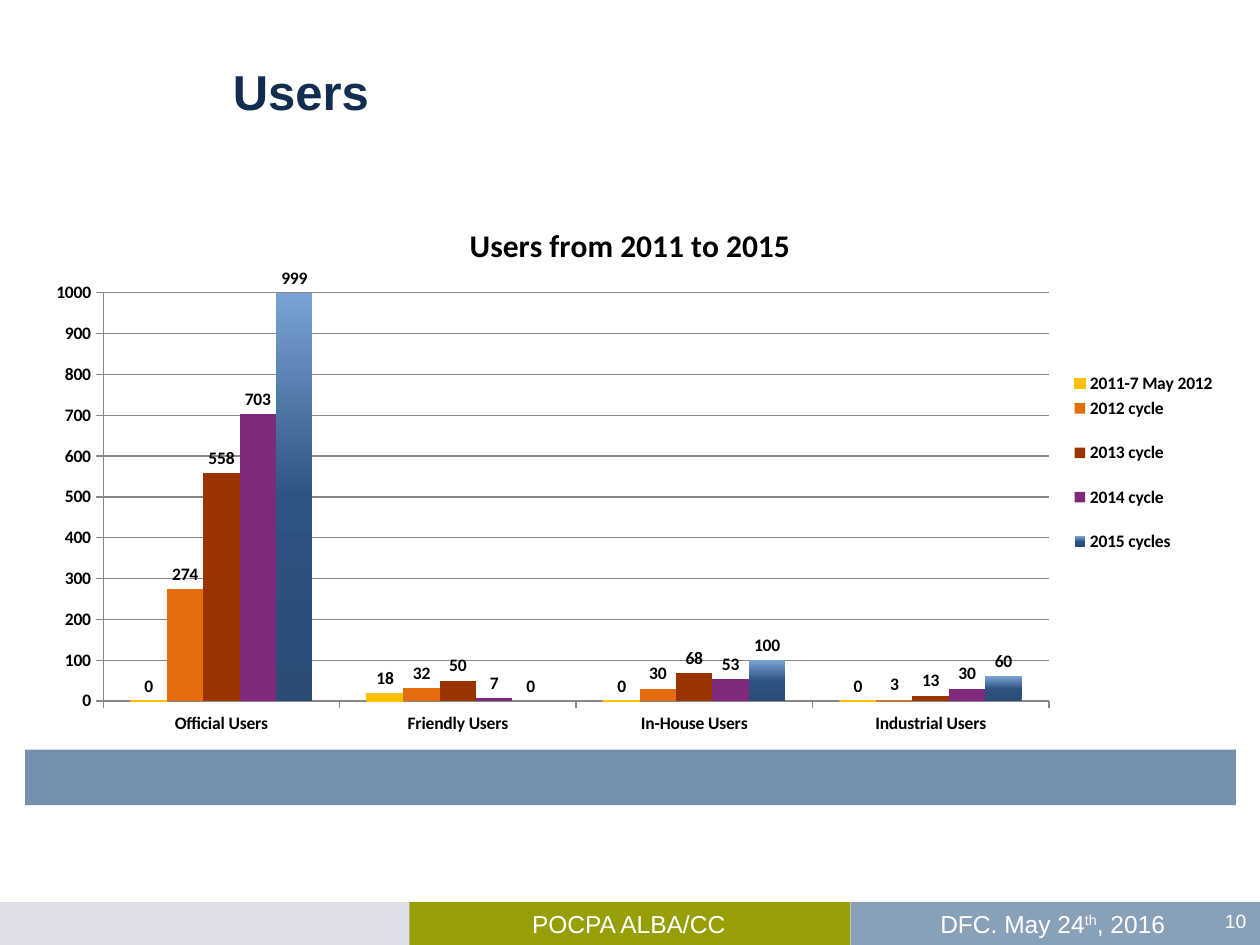
from lxml import etree
from pptx import Presentation
from pptx.chart.data import CategoryChartData
from pptx.dml.color import RGBColor
from pptx.enum.chart import XL_CHART_TYPE, XL_LABEL_POSITION, XL_LEGEND_POSITION, XL_TICK_MARK
from pptx.enum.shapes import MSO_SHAPE
from pptx.enum.text import MSO_ANCHOR, PP_ALIGN
from pptx.oxml import parse_xml
from pptx.oxml.ns import nsdecls, qn
from pptx.util import Inches, Pt

WHITE = RGBColor(0xFF, 0xFF, 0xFF)
BLACK = RGBColor(0, 0, 0)
NAVY = RGBColor(0x11, 0x2E, 0x50)
STEEL = RGBColor(0x74, 0x90, 0xAC)
PALE = RGBColor(0xDE, 0xDF, 0xE6)
OLIVE = RGBColor(0x97, 0x9F, 0x07)
BLUE_GREY = RGBColor(0x88, 0xA0, 0xB8)
GREY = RGBColor(0x87, 0x87, 0x87)
YELLOW = RGBColor(0xFF, 0xC0, 0x00)
ORANGE = RGBColor(0xE4, 0x6C, 0x0A)
RUST = RGBColor(0x99, 0x33, 0x00)
PURPLE = RGBColor(0x7F, 0x29, 0x7B)
BLUES = [(0, RGBColor(0x2A, 0x4C, 0x75)), (50, RGBColor(0x2E, 0x54, 0x82)),
         (100, RGBColor(0x79, 0xA3, 0xD5))]

FOOT_Y, FOOT_H = 7.16, 0.34
BARS = [  # left, top, width, height, colour
    (0, FOOT_Y, 3.5, FOOT_H, PALE),
    (3.25, FOOT_Y, 3.5, FOOT_H, OLIVE),
    (6.75, FOOT_Y, 3.25, FOOT_H, BLUE_GREY),
    (0.2, 5.95, 9.61, 0.44, STEEL),
]
TEXTS = [  # box, alignment, size, colour, bold, runs as (text, superscript)
    ((3.25, FOOT_Y, 3.48, FOOT_H), PP_ALIGN.CENTER, 14, WHITE, False, [("POCPA ALBA/CC", False)]),
    ((6.73, FOOT_Y, 3.25, FOOT_H), PP_ALIGN.CENTER, 14, WHITE, False,
     [("DFC. May 24", False), ("th", True), (", 2016", False)]),
    ((9.49, FOOT_Y, 0.5, 0.29), PP_ALIGN.RIGHT, 11, WHITE, False, [("10", False)]),
    ((1.75, 0.44, 7.74, 0.57), PP_ALIGN.LEFT, 28, NAVY, True, [("Users", False)]),
]
CHART_TITLE = "Users from 2011 to 2015"
CHART_BOX = (0.25, 1.59, 9.5, 4.32)
PLOT_SHARES = {"x": 0.06, "y": 0.17, "w": 0.79, "h": 0.75}
CATEGORIES = ["Official Users", "Friendly Users", "In-House Users", "Industrial Users"]
SERIES = [  # a line break in a name spaces out the legend
    ("2011-7 May 2012", (0, 18, 0, 0), YELLOW),
    ("2012 cycle\n", (274, 32, 30, 3), ORANGE),
    ("2013 cycle\n", (558, 50, 68, 13), RUST),
    ("2014 cycle\n", (703, 7, 53, 30), PURPLE),
    ("2015 cycles\n", (999, 0, 100, 60), BLUES),
]


def inches(box):
    return [Inches(v) for v in box]


def add_bar(slide, *box, color):
    s = slide.shapes.add_shape(MSO_SHAPE.RECTANGLE, *inches(box))
    s.shadow.inherit = False
    s.fill.solid()
    s.fill.fore_color.rgb = color
    s.line.fill.background()


def add_text(slide, box, align, size, color, bold, runs):
    tf = slide.shapes.add_textbox(*inches(box)).text_frame
    tf.word_wrap = True
    tf.vertical_anchor = MSO_ANCHOR.MIDDLE
    p = tf.paragraphs[0]
    p.alignment = align
    for text, superscript in runs:
        r = p.add_run()
        r.text = text
        style_font(r.font, "Arial", size, color, bold)
        if superscript:
            r.font._element.set("baseline", "30000")


def style_font(font, name, size, color, bold):
    font.name, font.size, font.bold = name, Pt(size), bold
    font.color.rgb = color


def fill_gradient(fmt, stops):
    """Fill upwards through any number of (percent, colour) stops."""
    fmt.fill.solid()
    gs = "".join(f'<a:gs pos="{pos * 1000}"><a:srgbClr val="{color}"/></a:gs>'
                 for pos, color in stops)
    grad = parse_xml(f'<a:gradFill {nsdecls("a")} rotWithShape="1"><a:gsLst>{gs}</a:gsLst>'
                     '<a:lin ang="16200000" scaled="0"/></a:gradFill>')
    solid = fmt._element.spPr.find(qn("a:solidFill")) if hasattr(fmt, "_element") and hasattr(
        fmt._element, "spPr") else fmt._element.find(".//" + qn("a:solidFill"))
    solid.getparent().replace(solid, grad)


def place_plot(chart, shares):
    """Fix the inner plot area as shares of the chart."""
    area = chart._chartSpace.find(".//" + qn("c:plotArea"))
    for old in area.findall(qn("c:layout")):
        area.remove(old)
    layout = etree.Element(qn("c:layout"))
    manual = etree.SubElement(layout, qn("c:manualLayout"))
    settings = {"layoutTarget": "inner", "xMode": "edge", "yMode": "edge", **shares}
    for tag, value in settings.items():
        etree.SubElement(manual, qn("c:" + tag)).set("val", str(value))
    area.insert(0, layout)


def add_users_chart(slide):
    data = CategoryChartData()
    data.categories = CATEGORIES
    for name, values, _ in SERIES:
        data.add_series(name, values)
    chart = slide.shapes.add_chart(XL_CHART_TYPE.COLUMN_CLUSTERED, *inches(CHART_BOX), data).chart
    style_font(chart.font, "Calibri", 10, BLACK, True)

    chart.has_title = True
    r = chart.chart_title.text_frame.paragraphs[0].add_run()
    r.text = CHART_TITLE
    style_font(r.font, "Calibri", 18, BLACK, True)
    chart.chart_title.include_in_layout = False
    chart.has_legend = True
    chart.legend.position = XL_LEGEND_POSITION.RIGHT
    chart.legend.include_in_layout = False
    place_plot(chart, PLOT_SHARES)

    axis = chart.value_axis
    axis.minimum_scale, axis.maximum_scale, axis.major_unit = 0, 1000, 100
    axis.has_major_gridlines = True
    for line in (axis.format.line, chart.category_axis.format.line, axis.major_gridlines.format.line):
        line.color.rgb = GREY
        line.width = Pt(0.75)
    for ax in (axis, chart.category_axis):
        ax.major_tick_mark = XL_TICK_MARK.OUTSIDE

    plot = chart.plots[0]
    plot.gap_width, plot.overlap, plot.vary_by_categories = 150, 0, False
    for series, (_, _, color) in zip(plot.series, SERIES):
        series.invert_if_negative = False
        if isinstance(color, list):
            series.format.fill.solid()
            fill_gradient(series.format, color) if hasattr(series.format, "_element") else None
        else:
            series.format.fill.solid()
            series.format.fill.fore_color.rgb = color
        if color == YELLOW:
            series.format.line.color.rgb = color
            series.format.line.width = Pt(0.75)
        labels = series.data_labels
        labels.show_value = True
        labels.position = XL_LABEL_POSITION.OUTSIDE_END


prs = Presentation()
prs.slide_width, prs.slide_height = Inches(10), Inches(7.5)
slide = prs.slides.add_slide(prs.slide_layouts[6])
for *box, color in BARS:
    add_bar(slide, *box, color=color)
add_users_chart(slide)
for text in TEXTS:
    add_text(slide, *text)
prs.save("out.pptx")
